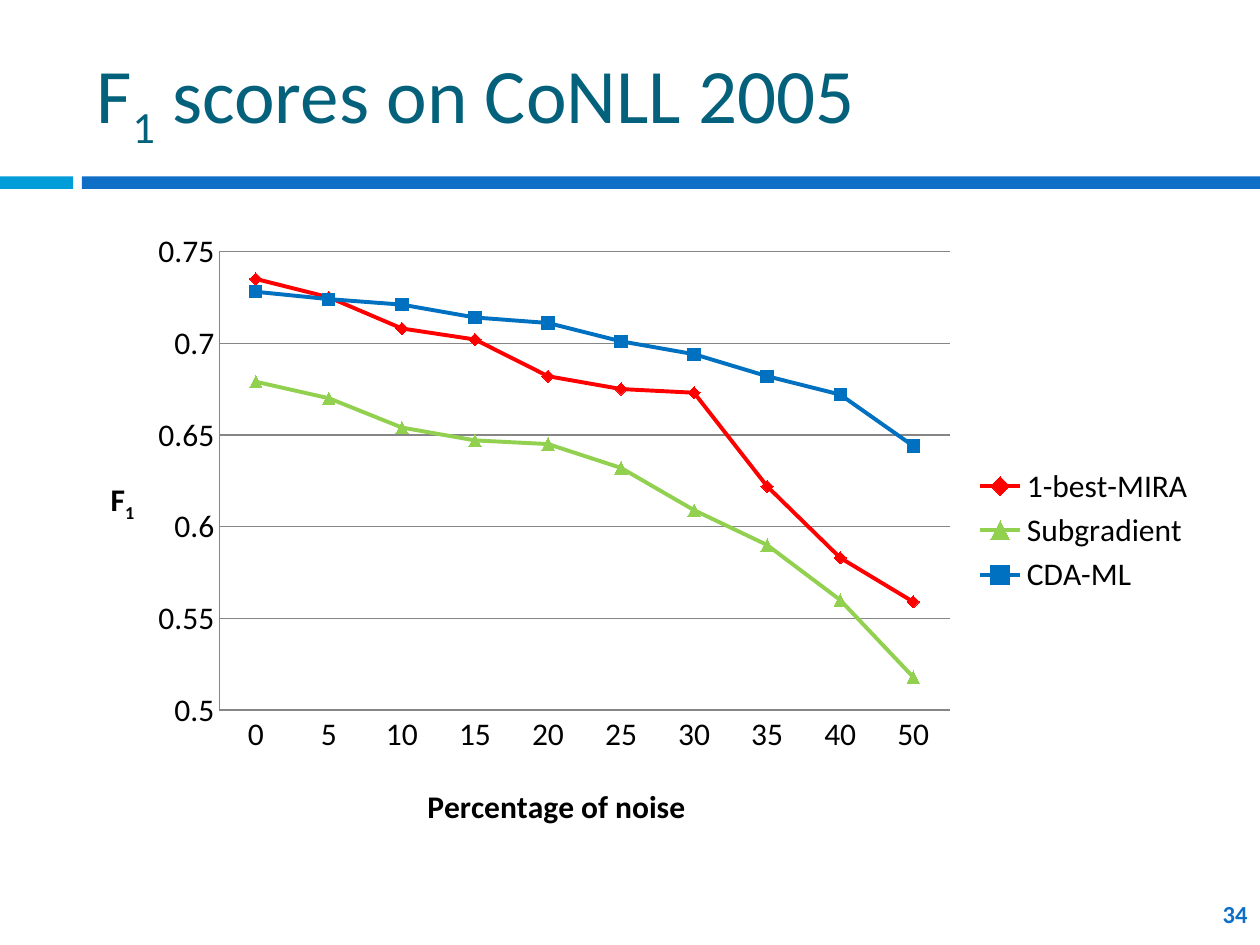
from typing import NamedTuple

from lxml import etree
from pptx import Presentation
from pptx.chart.data import CategoryChartData
from pptx.dml.color import RGBColor
from pptx.enum.chart import XL_CHART_TYPE as ChartType
from pptx.enum.chart import XL_LEGEND_POSITION as LegendPosition
from pptx.enum.chart import XL_MARKER_STYLE as Marker
from pptx.enum.chart import XL_TICK_MARK as TickMark
from pptx.enum.shapes import MSO_SHAPE as Preset
from pptx.enum.text import MSO_ANCHOR as Anchor
from pptx.enum.text import PP_ALIGN as Align
from pptx.oxml.ns import qn
from pptx.util import Inches, Pt

SLIDE_WIDTH, SLIDE_HEIGHT = Inches(10), Inches(7.5)
FONT = "Calibri"
ACCENT, GRID_GRAY = "0F6FC6", "868686"


class Box(NamedTuple):
    """Left, top, width and height in inches."""
    left: float
    top: float
    width: float
    height: float

    def emu(self) -> list:
        return [Inches(length) for length in self]


class Run(NamedTuple):
    text: str
    subscript: bool = False


class Learner(NamedTuple):
    name: str
    color: str
    marker: Marker
    scores: tuple


NOISE_LEVELS = ("0", "5", "10", "15", "20", "25", "30", "35", "40", "50")
LEARNERS = (
    Learner("1-best-MIRA", "FF0000", Marker.DIAMOND,
            (0.735, 0.725, 0.708, 0.702, 0.682, 0.675, 0.673, 0.622, 0.583, 0.559)),
    Learner("Subgradient", "92D050", Marker.TRIANGLE,
            (0.679, 0.67, 0.654, 0.647, 0.645, 0.632, 0.609, 0.59, 0.56, 0.518)),
    Learner("CDA-ML", "0070C0", Marker.SQUARE,
            (0.728, 0.724, 0.721, 0.714, 0.711, 0.701, 0.694, 0.682, 0.672, 0.644)),
)
F1 = (Run("F"), Run("1", subscript=True))


def rgb(color: str) -> RGBColor:
    return RGBColor.from_string(color)


def apply_format(target, values: dict) -> None:
    for attribute, value in values.items():
        setattr(target, attribute, value)


def style_font(font, size: float, color: str, bold: bool = False) -> None:
    apply_format(font, {"name": FONT, "size": Pt(size), "bold": bold})
    font.color.rgb = rgb(color)


def write_runs(paragraph, runs: tuple, size: float, color: str, bold: bool = False) -> None:
    for part in runs:
        run = paragraph.add_run()
        run.text = part.text
        style_font(run.font, size, color, bold)
        if part.subscript:
            run.font._element.set("baseline", "-25000")


def add_text(slide, box: Box, runs: tuple, size: float, color: str,
             bold: bool = False, align: Align = Align.LEFT) -> None:
    frame = slide.shapes.add_textbox(*box.emu()).text_frame
    apply_format(frame, {"word_wrap": True, "vertical_anchor": Anchor.MIDDLE})
    frame.paragraphs[0].alignment = align
    write_runs(frame.paragraphs[0], runs, size, color, bold)


def add_bar(slide, box: Box, color: str) -> None:
    bar = slide.shapes.add_shape(Preset.RECTANGLE, *box.emu())
    bar.shadow.inherit = False
    bar.fill.solid()
    bar.fill.fore_color.rgb = rgb(color)
    bar.line.fill.background()


def place(parent, index: int, **shares) -> None:
    """Put a chart part at x, y (and w, h) given as shares of the chart's size."""
    for old in parent.findall(qn("c:layout")):
        parent.remove(old)
    layout = etree.Element(qn("c:layout"))
    parent.insert(index, layout)
    manual = etree.SubElement(layout, qn("c:manualLayout"))
    settings = {"xMode": "edge", "yMode": "edge", **shares}
    if "w" in shares:
        settings = {"layoutTarget": "inner", **settings}
    for tag, value in settings.items():
        etree.SubElement(manual, qn(f"c:{tag}")).set("val", str(value))


def style_line(line, color: str, width: float) -> None:
    line.color.rgb = rgb(color)
    line.width = Pt(width)


def style_axis(axis, title: tuple, x: float, y: float) -> None:
    apply_format(axis, {"major_tick_mark": TickMark.NONE, "minor_tick_mark": TickMark.NONE})
    style_line(axis.format.line, GRID_GRAY, 0.75)
    frame = axis.axis_title.text_frame
    write_runs(frame.paragraphs[0], title, 18, "000000", bold=True)
    body = frame._txBody.find(qn("a:bodyPr"))
    body.set("rot", "0")
    body.set("vert", "horz")
    place(axis.axis_title._element, 1, x=x, y=y)


def add_score_chart(slide, box: Box) -> None:
    data = CategoryChartData()
    data.categories = NOISE_LEVELS
    for learner in LEARNERS:
        data.add_series(learner.name, learner.scores)
    chart = slide.shapes.add_chart(ChartType.LINE_MARKERS, *box.emu(), data).chart
    apply_format(chart, {"has_title": False, "has_legend": True})
    style_font(chart.font, 18, "000000")
    apply_format(chart.legend, {"position": LegendPosition.RIGHT, "include_in_layout": False})
    chart.plots[0].vary_by_categories = False

    for series, learner in zip(chart.plots[0].series, LEARNERS):
        series.smooth = False
        style_line(series.format.line, learner.color, 2.25)
        apply_format(series.marker, {"style": learner.marker, "size": 7})
        series.marker.format.fill.solid()
        series.marker.format.fill.fore_color.rgb = rgb(learner.color)
        style_line(series.marker.format.line, learner.color, 0.75)

    scores = chart.value_axis
    apply_format(scores, {"minimum_scale": 0.5, "maximum_scale": 0.75,
                          "major_unit": 0.05, "has_major_gridlines": True})
    style_line(scores.major_gridlines.format.line, GRID_GRAY, 0.75)
    apply_format(scores.tick_labels, {"number_format": "General",
                                      "number_format_is_linked": False})
    style_axis(scores, F1, x=0.02, y=0.41)
    style_axis(chart.category_axis, (Run("Percentage of noise"),), x=0.3, y=0.9)
    place(chart._chartSpace.chart.plotArea, 0, x=0.12, y=0.05, w=0.65, h=0.74)


def main() -> None:
    deck = Presentation()
    apply_format(deck, {"slide_width": SLIDE_WIDTH, "slide_height": SLIDE_HEIGHT})
    slide = deck.slides.add_slide(deck.slide_layouts[6])
    add_bar(slide, Box(0, 1.4, 0.58, 0.1), "009DD9")
    add_bar(slide, Box(0.65, 1.4, 9.35, 0.1), ACCENT)
    add_text(slide, Box(0.67, 0.25, 8.92, 1.08),
             F1 + (Run(" scores on CoNLL 2005"),), 44, "04617B")
    add_text(slide, Box(9.5, 7, 0.5, 0.5), (Run("34"),), 14, ACCENT,
             bold=True, align=Align.RIGHT)
    add_score_chart(slide, Box(0.67, 1.75, 8.92, 4.92))
    deck.save("out.pptx")


if __name__ == "__main__":
    main()
